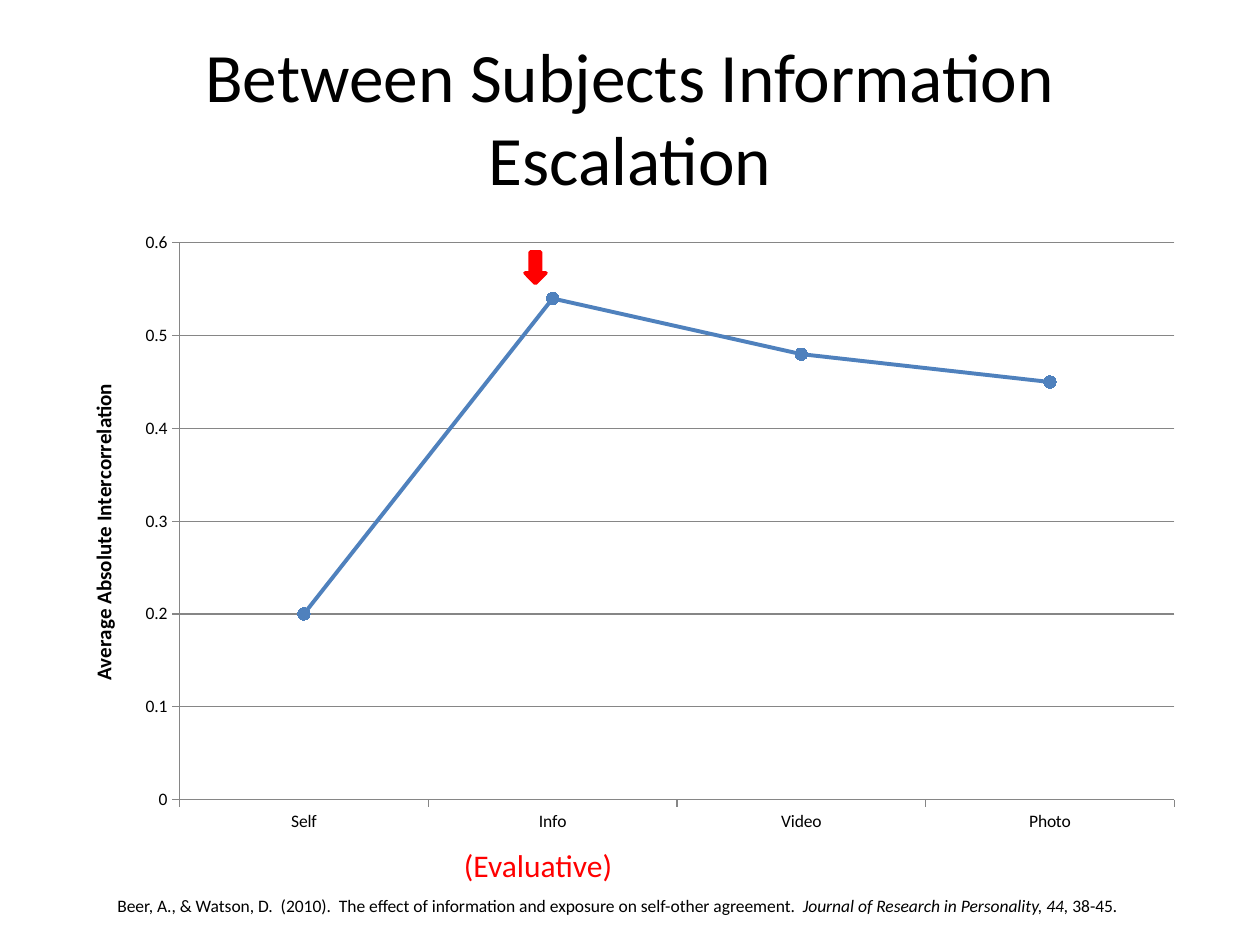
from pptx import Presentation
from pptx.chart.data import CategoryChartData
from pptx.dml.color import RGBColor
from pptx.enum.chart import XL_CHART_TYPE as ChartType, XL_MARKER_STYLE as Marker, XL_TICK_MARK as Tick
from pptx.enum.shapes import MSO_SHAPE as Shape
from pptx.enum.text import MSO_ANCHOR as Anchor, MSO_AUTO_SIZE as AutoSize, PP_ALIGN as Align
from pptx.util import Pt

BLACK = RGBColor(0x00, 0x00, 0x00)
RED = RGBColor(0xFF, 0x00, 0x00)
BLUE = RGBColor(0x4F, 0x81, 0xBD)
GRAY = RGBColor(0x86, 0x86, 0x86)
FONT = "Calibri"


def set_font(font, size, color=BLACK):
    font.name = FONT
    font.size = Pt(size)
    font.color.rgb = color


def add_label(left, top, width, height, size, color, runs):
    box = slide.shapes.add_textbox(Pt(left), Pt(top), Pt(width), Pt(height))
    frame = box.text_frame
    frame.word_wrap = False
    frame.auto_size = AutoSize.SHAPE_TO_FIT_TEXT
    paragraph = frame.paragraphs[0]
    set_font(paragraph.font, size, color)
    for text, italic in runs:
        run = paragraph.add_run()
        run.text = text
        if italic:
            run.font.italic = True


prs = Presentation()
prs.slide_width, prs.slide_height = Pt(720), Pt(540)
slide = prs.slides.add_slide(prs.slide_layouts[5])

# Title
title = slide.shapes.title
title.left, title.top, title.width, title.height = Pt(36), Pt(21.6), Pt(648), Pt(90)
title.text_frame.text = "Between Subjects Information Escalation"
title.text_frame.vertical_anchor = Anchor.MIDDLE
heading = title.text_frame.paragraphs[0]
heading.alignment = Align.CENTER
set_font(heading.font, 39.6)

# Line chart
data = CategoryChartData()
data.categories = ["Self", "Info", "Video", "Photo"]
data.add_series("Series 1", [0.2, 0.54, 0.48, 0.45])
chart = slide.shapes.add_chart(
    ChartType.LINE_MARKERS, Pt(36), Pt(126), Pt(648), Pt(356.4), data).chart
chart.has_legend = False
chart.has_title = False
set_font(chart.font, 10)

# Axes
correlation_axis = chart.value_axis
correlation_axis.minimum_scale = 0
correlation_axis.maximum_scale = 0.6
correlation_axis.major_unit = 0.1
correlation_axis.has_major_gridlines = True
for axis in (chart.category_axis, correlation_axis):
    axis.major_tick_mark = Tick.OUTSIDE
    axis.minor_tick_mark = Tick.NONE
for line in (chart.category_axis.format.line, correlation_axis.format.line,
             correlation_axis.major_gridlines.format.line):
    line.color.rgb = GRAY
    line.width = Pt(0.75)
axis_title = correlation_axis.axis_title.text_frame
axis_title.text = "Average Absolute Intercorrelation"
set_font(axis_title.paragraphs[0].font, 12)
axis_title.paragraphs[0].font.bold = True

# Correlation line
correlations = chart.plots[0].series[0]
chart.plots[0].vary_by_categories = False
correlations.smooth = False
correlations.format.line.color.rgb = BLUE
correlations.format.line.width = Pt(2.25)
correlations.marker.style = Marker.CIRCLE
correlations.marker.size = 7
correlations.marker.format.fill.solid()
correlations.marker.format.fill.fore_color.rgb = BLUE
correlations.marker.format.line.fill.background()

# Arrow to the peak
peak_arrow = slide.shapes.add_shape(Shape.DOWN_ARROW, Pt(300), Pt(144), Pt(12), Pt(18))
peak_arrow.shadow.inherit = False
peak_arrow.fill.solid()
peak_arrow.fill.fore_color.rgb = RED
peak_arrow.line.color.rgb = RED
peak_arrow.line.width = Pt(2)

# Note under "Info" and citation
add_label(258, 480, 100, 29, 18, RED, [("(Evaluative)", False)])
add_label(60, 508, 597.6, 32, 10, BLACK, [
    ("Beer, A., & Watson, D.  (2010).  The effect of information and exposure "
     "on self-other agreement.  ", False),
    ("Journal of Research in Personality, 44, ", True),
    ("38-45", False),
    (".", True),
])

prs.save("out.pptx")
